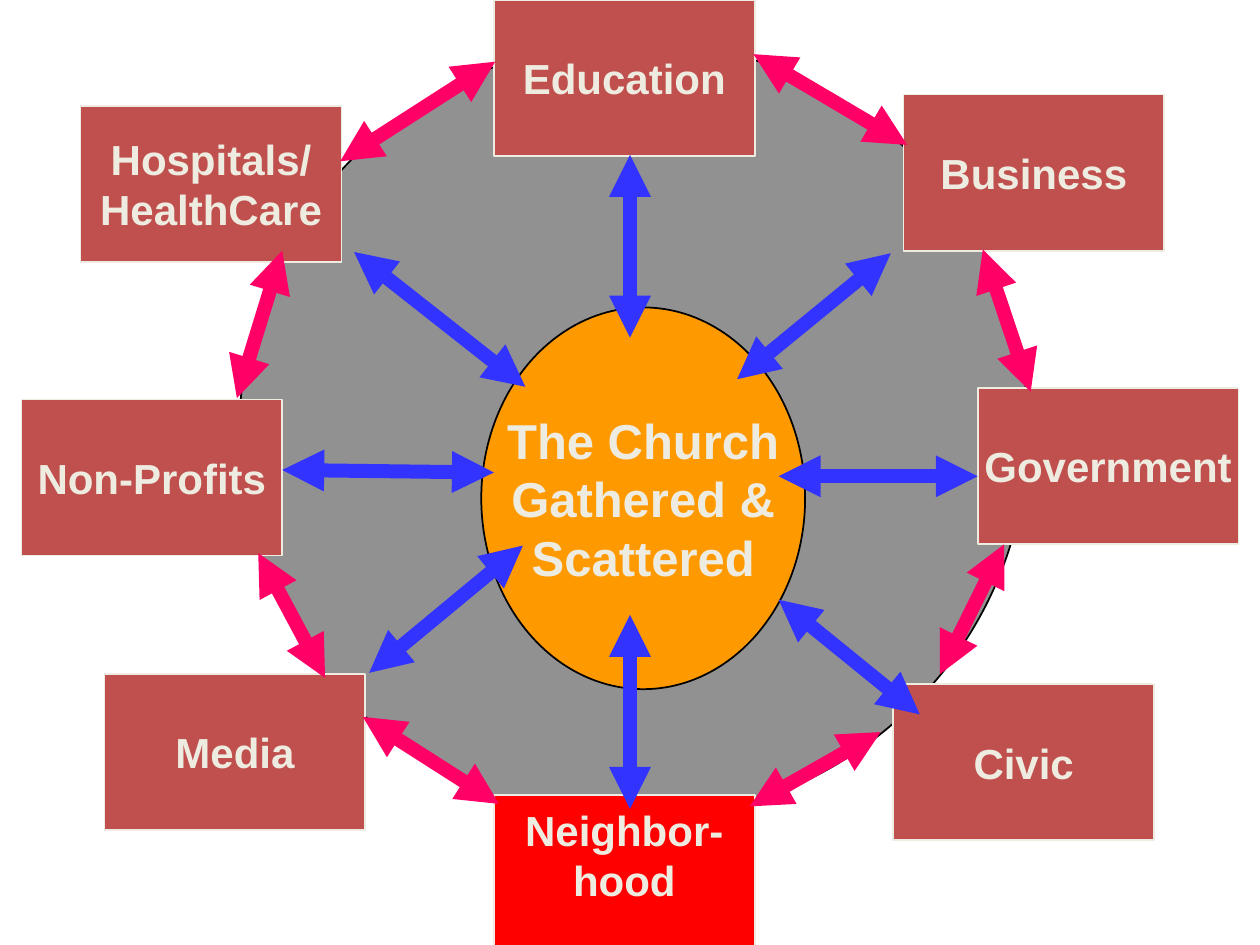
from lxml import etree
from pptx import Presentation, util as u
from pptx.dml.color import RGBColor
from pptx.enum import shapes, text
from pptx.oxml.ns import qn

COLORS = {
    "ring": "919191", "church": "FF9900", "sector": "C0504D",
    "highlight": "FF0000", "text": "EEECE1", "outline": "000000",
    "spoke": "3333FF", "rim": "FF0066",
}
BOX_WIDTH, BOX_HEIGHT = 2.07, 1.24
CHURCH = ["The Church", "Gathered &", "Scattered"]
SECTORS = [
    (["Government"], 7.76, 3.08, "sector"),
    (["Business"], 7.17, 0.75, "sector"),
    (["Education"], 3.92, 0, "sector"),
    (["Hospitals/", "HealthCare"], 0.64, 0.84, "sector"),
    (["Non-Profits"], 0.17, 3.17, "sector"),
    (["Civic"], 7.09, 5.43, "sector"),
    (["Neighbor-", "hood"], 3.92, 6.31, "highlight"),
    (["Media"], 0.83, 5.35, "sector"),
]
ARROWS = {
    "spoke": [
        (2.24, 3.73, 3.92, 3.75), (6.18, 3.78, 7.76, 3.78),
        (5, 2.68, 5, 1.23), (5, 6.42, 5, 4.88),
        (2.93, 5.34, 4.15, 4.33), (6.18, 4.76, 7.3, 5.67),
        (5.85, 3.01, 7.07, 2.01), (2.81, 2, 4.17, 3.07),
    ],
    "rim": [
        (2.05, 4.39, 2.58, 5.38), (2.88, 5.69, 3.96, 6.38),
        (5.95, 6.4, 6.99, 5.81), (7.97, 4.32, 7.46, 5.35),
        (7.8, 1.98, 8.18, 3.11), (5.98, 0.43, 7.2, 1.15),
        (2.7, 1.28, 3.93, 0.49), (1.88, 3.16, 2.24, 1.99),
    ],
}


def color(name):
    return RGBColor.from_string(COLORS[name])


def add_figure(slide, kind, bounds, fill, line, lines=(), size=24):
    shape = slide.shapes.add_shape(kind, *map(u.Inches, bounds))
    shape.shadow.inherit = False
    shape.fill.solid()
    shape.fill.fore_color.rgb = color(fill)
    shape.line.color.rgb = color(line)
    shape.line.width = u.Pt(1)
    frame = shape.text_frame
    frame.word_wrap = False
    frame.vertical_anchor = text.MSO_ANCHOR.MIDDLE
    for index, words in enumerate(lines):
        paragraph = frame.add_paragraph() if index else frame.paragraphs[0]
        paragraph.text = words
        paragraph.alignment = text.PP_ALIGN.CENTER
        paragraph.font.name = "Arial"
        paragraph.font.size = u.Pt(size)
        paragraph.font.bold = True
        paragraph.font.color.rgb = color("text")
    return shape


def add_arrow(slide, ends, line):
    connector = slide.shapes.add_connector(
        shapes.MSO_CONNECTOR.STRAIGHT, *map(u.Inches, ends))
    connector.line.color.rgb = color(line)
    connector.line.width = u.Pt(8)
    properties = connector.line._get_or_add_ln()
    for tag in ("a:headEnd", "a:tailEnd"):
        etree.SubElement(properties, qn(tag), type="triangle")
    etree.SubElement(connector._element.spPr, qn("a:effectLst"))


def main():
    presentation = Presentation()
    presentation.slide_width = u.Inches(10)
    presentation.slide_height = u.Inches(7.5)
    slide = presentation.slides.add_slide(presentation.slide_layouts[6])

    oval = shapes.MSO_SHAPE.OVAL
    ring = add_figure(slide, oval, (1.9, 0.33, 6.26, 6.18), "ring", "outline")
    ring.rotation = 355
    add_figure(slide, oval, (3.82, 2.44, 2.57, 3.03), "church", "outline", CHURCH, 28)

    for lines, left, top, fill in SECTORS:
        box = add_figure(slide, shapes.MSO_SHAPE.RECTANGLE,
                         (left, top, BOX_WIDTH, BOX_HEIGHT), fill, "text", lines)
        if fill == "highlight":
            box.text_frame.margin_bottom = u.Inches(0.34)

    for line, arrows in ARROWS.items():
        for ends in arrows:
            add_arrow(slide, ends, line)

    presentation.save("out.pptx")


if __name__ == "__main__":
    main()
